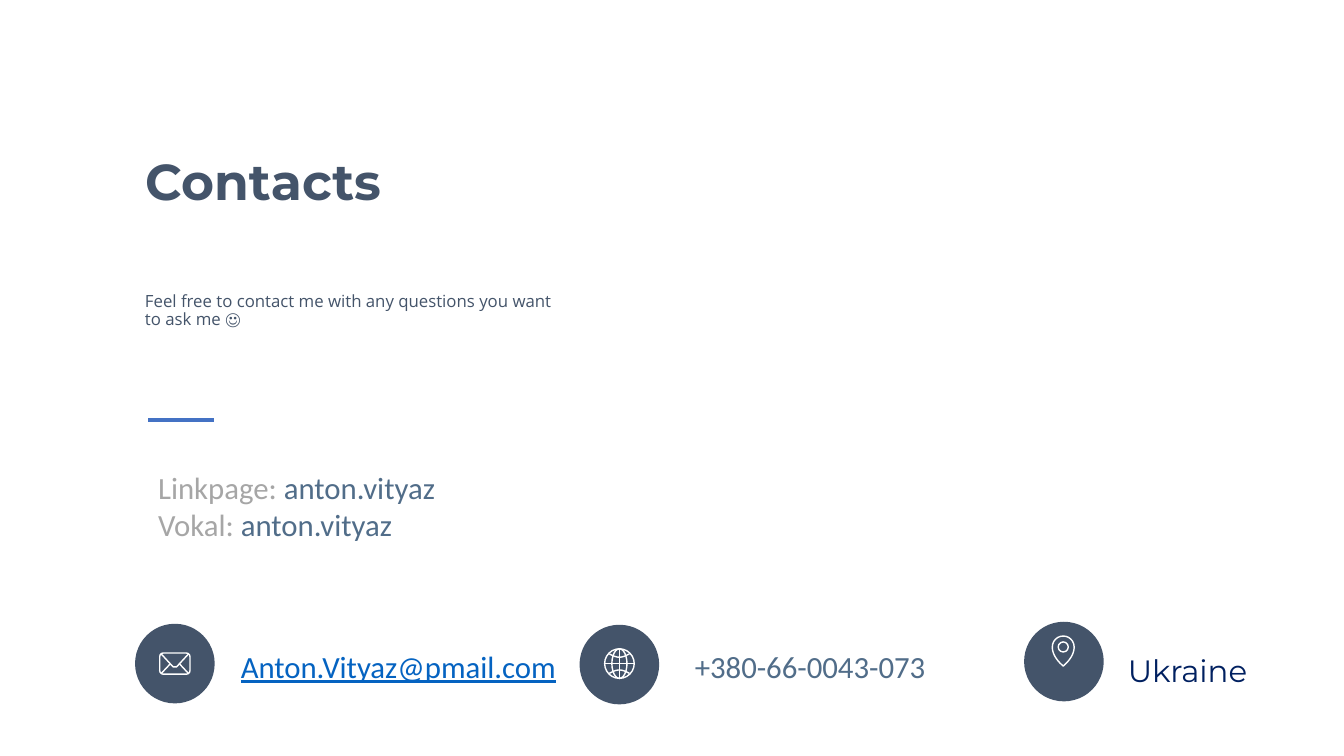
from math import cos, pi, sin

from lxml.etree import SubElement
from pptx import Presentation
from pptx.dml.color import RGBColor
from pptx.enum.shapes import MSO_CONNECTOR, MSO_SHAPE
from pptx.enum.text import MSO_ANCHOR, MSO_AUTO_SIZE, PP_ALIGN
from pptx.oxml.ns import qn
from pptx.util import Inches, Pt

COLORS = {
    "slate": "44546A", "steel": "516D89", "gray": "A6A6A6", "navy": "002060",
    "link": "0563C1", "accent": "4472C4", "white": "FFFFFF",
}
RGB = {name: RGBColor.from_string(value) for name, value in COLORS.items()}

deck = Presentation()
deck.slide_width, deck.slide_height = Inches(13.33), Inches(7.5)
slide = deck.slides.add_slide(deck.slide_layouts[5])
shapes = slide.shapes

# The slide is a grid of 80 columns by 45 rows of square cells.
CELL = deck.slide_width / 80


def cells(*counts):
    return [round(count * CELL) for count in counts]


def add_text(box, paragraphs, size, font, wrap=True, inset=True):
    """Add a text box; each paragraph is a list of (text, colour) runs."""
    frame = shapes.add_textbox(*cells(*box)).text_frame
    frame.word_wrap = wrap
    if not inset:
        frame.margin_left = frame.margin_right = 0
        frame.margin_top = frame.margin_bottom = 0
    for number, parts in enumerate(paragraphs):
        paragraph = frame.add_paragraph() if number else frame.paragraphs[0]
        for text, color in parts:
            run = paragraph.add_run()
            run.text = text
            run.font.size, run.font.name = Pt(size), font
            run.font.color.rgb = RGB[color]
    return frame.paragraphs[0]


# Heading and invitation
heading = shapes.title
heading.left, heading.top, heading.width, heading.height = cells(8.04, 8.58, 32.04, 4.26)
heading_frame = heading.text_frame
heading_frame.text = "Contacts"
heading_frame.auto_size = MSO_AUTO_SIZE.NONE
heading_frame.vertical_anchor = MSO_ANCHOR.MIDDLE
heading_line = heading_frame.paragraphs[0]
heading_line.alignment = PP_ALIGN.LEFT
heading_font = heading_line.runs[0].font
heading_font.size, heading_font.name, heading_font.bold = Pt(36), "Montserrat", True
heading_font.color.rgb = RGB["slate"]

invitation = add_text(
    (8.04, 17.16, 25.5, 11.04),
    [[("Feel free to contact me with any questions you want to ask me ☺", "slate")]],
    12, "Open Sans")
invitation.line_spacing = 0.9

# Accounts and contact details
add_text((8.82, 27.6, 25.08, 5.04),
         [[("Linkpage: ", "gray"), ("anton.vityaz", "steel")],
          [("Vokal: ", "gray"), ("anton.vityaz", "steel")]], 22, "Calibri")
email = add_text((13.74, 38.28, 20.04, 2.82),
                 [[("Anton.Vityaz@pmail.com", "link")]], 22, "Calibri", wrap=False)
email.runs[0].font.underline = True
add_text((41.36, 38.58, 13.86, 2.22), [[("+380-66-0043-073", "steel")]],
         22, "Calibri", wrap=False, inset=False)
country = add_text((67.14, 37.98, 7.14, 2.76), [[("Ukraine", "navy")]],
                   22, "Montserrat", wrap=False, inset=False)
country.line_spacing = Pt(36)

# Badges at equal steps, with their centres kept for the icons
BADGE = 4.74
centers = []
for number, top in enumerate((37.14, 37.2, 37.02)):
    left = 8.04 + 26.46 * number
    badge = shapes.add_shape(MSO_SHAPE.OVAL, *cells(left, top, BADGE, BADGE))
    badge.shadow.inherit = False
    badge.fill.solid()
    badge.fill.fore_color.rgb = RGB["slate"]
    badge.line.fill.background()
    centers.append((left + BADGE / 2, top + BADGE / 2))
mail, globe, pin = centers

# Icon parts: outlines as centre offset and radii, open curves as offsets
outlines = [
    (MSO_SHAPE.ROUNDED_RECTANGLE, mail, 0, 0, 0.9, 0.63),
    (MSO_SHAPE.OVAL, globe, 0, -0.06, 0.88, 0.88),
    (MSO_SHAPE.OVAL, globe, 0, -0.06, 0.45, 0.88),
    (MSO_SHAPE.OVAL, pin, -0.04, -0.87, 0.3, 0.3),
]
icon_parts = []
for kind, (x, y), dx, dy, rx, ry in outlines:
    icon_parts.append(shapes.add_shape(
        kind, *cells(x + dx - rx, y + dy - ry, 2 * rx, 2 * ry)))

HEAD, DROP, STEPS = 0.65, 1.14, 12
shares = [step / STEPS for step in range(STEPS + 1)]
dome = [(-HEAD * cos(pi * t), -HEAD * sin(pi * t)) for t in shares]
right_side = [(HEAD * (1 - t * t), DROP * t) for t in shares[1:]]
left_side = [(-x, y) for x, y in reversed(right_side[:-1])]
marker = [(x - 0.04, y - 0.87) for x, y in dome + right_side + left_side]

flap = [(-0.82, -0.58), (-0.1, 0.2), (0.1, 0.2), (0.82, -0.58)]
north = [(1.2 * t - 0.6, -0.64 + 0.2 * sin(pi * t)) for t in shares]
south = [(x, -0.12 - y) for x, y in north]
for center, curve, closed in ((mail, flap, False), (globe, north, False),
                              (globe, south, False), (pin, marker, True)):
    points = [cells(center[0] + x, center[1] + y) for x, y in curve]
    builder = shapes.build_freeform(*points[0])
    builder.add_line_segments(points[1:], close=closed)
    icon_parts.append(builder.convert_to_shape())

for part in icon_parts:
    part.shadow.inherit = False
    part.fill.background()
    part.line.color.rgb = RGB["white"]
    part.line.width = Pt(1)

# Straight lines: the accent rule, envelope folds, equator and meridian
straight = [
    ((0, 0), (8.82, 25.02), (12.72, 25.02), "accent", 3),
    (mail, (-0.82, 0.6), (-0.28, 0.02), "white", 1),
    (mail, (0.82, 0.6), (0.28, 0.02), "white", 1),
    (globe, (-0.88, -0.06), (0.88, -0.06), "white", 1),
    (globe, (0, -0.94), (0, 0.82), "white", 1),
]
for (x, y), (x1, y1), (x2, y2), color, width in straight:
    stroke = shapes.add_connector(
        MSO_CONNECTOR.STRAIGHT, *cells(x + x1, y + y1, x + x2, y + y2))
    stroke.line.color.rgb = RGB[color]
    stroke.line.width = Pt(width)
    SubElement(stroke._element.spPr, qn("a:effectLst"))

deck.save("out.pptx")
